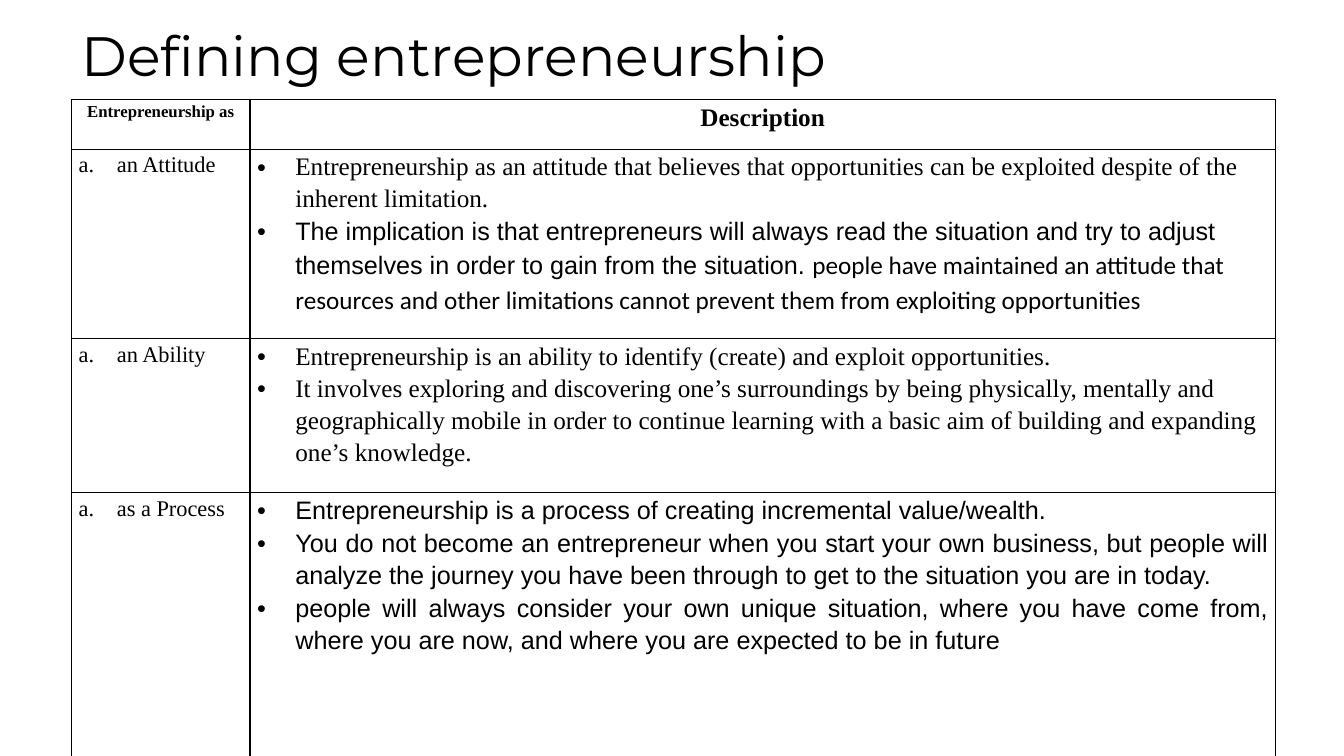
from lxml import etree
from pptx import Presentation
from pptx import util as u
from pptx.dml.color import RGBColor
from pptx.enum import text as t
from pptx.oxml.ns import qn

COLORS = {"ink": "000000", "paper": "FFFFFF"}
SERIF, SANS, HUMANIST, DISPLAY = "Times New Roman", "Arial", "Calibri", "Montserrat"
WIDTH, HEIGHT = 13.33, 7.5
COLUMNS = [1.77, 10.17]
ROWS = [0.49, 1.88, 1.53, 2.64]
LEFT, JUSTIFY, CENTER = t.PP_ALIGN.LEFT, t.PP_ALIGN.JUSTIFY, t.PP_ALIGN.CENTER
LETTER = ("a:buAutoNum", {"type": "alphaLcPeriod"})
DOT = ("a:buChar", {"char": "•"})

# Each topic: label, alignment, paragraphs made of (wording, font) spans
TOPICS = [
    ("an Attitude", LEFT, [
        [("Entrepreneurship as an attitude that believes that opportunities can be "
          "exploited despite of the inherent limitation.", SERIF)],
        [("The implication is that entrepreneurs will always read the situation and try "
          "to adjust themselves in order to gain from the situation. ", SANS),
         ("people have maintained an attitude that resources and other limitations "
          "cannot prevent them from exploiting opportunities", HUMANIST)],
    ]),
    ("an Ability", LEFT, [
        [("Entrepreneurship is an ability to identify (create) and exploit "
          "opportunities.", SERIF)],
        [("It involves exploring and discovering one’s surroundings by being physically, "
          "mentally and geographically mobile in order to continue learning with a basic "
          "aim of building and expanding one’s knowledge.", SERIF)],
    ]),
    ("as a Process", JUSTIFY, [
        [("Entrepreneurship is a process of creating incremental value/wealth.", SANS)],
        [("You do not become an entrepreneur when you start your own business, but people "
          "will analyze the journey you have been through to get to the situation you are "
          "in today. ", SANS)],
        [("people will always consider your own unique situation, where you have come "
          "from, where you are now, and where you are expected to be in future", SANS)],
    ]),
]


def assign(target, values):
    for name, value in values.items():
        setattr(target, name, value)


def add_span(para, wording, font, size, bold=False):
    span = para.add_run()
    span.text = wording
    assign(span.font, {"name": font, "size": u.Pt(size), "bold": bold})
    span.font.color.rgb = RGBColor.from_string(COLORS["ink"])


def add_bullet(para, bullet):
    tag, values = bullet
    props = para._p.get_or_add_pPr()
    props.set("marL", str(u.Inches(0.38)))
    props.set("indent", str(-u.Inches(0.38)))
    if bullet is DOT:
        etree.SubElement(props, qn("a:buFont"), typeface=SANS)
    etree.SubElement(props, qn(tag), values)


def style_cell(cell):
    assign(cell, {"margin_left": u.Inches(0.07), "margin_right": u.Inches(0.07),
                  "margin_top": 0, "margin_bottom": 0})
    props = cell._tc.get_or_add_tcPr()
    for side in ("a:lnL", "a:lnR", "a:lnT", "a:lnB"):
        border = etree.SubElement(props, qn(side), w=str(u.Pt(1)))
        fill = etree.SubElement(border, qn("a:solidFill"))
        etree.SubElement(fill, qn("a:srgbClr"), val=COLORS["ink"])
    cell.fill.background()


def fill_cell(cell, paragraphs, size, align=LEFT, bullet=None, bold=False):
    style_cell(cell)
    frame = cell.text_frame
    for index, spans in enumerate(paragraphs):
        para = frame.add_paragraph() if index else frame.paragraphs[0]
        if bullet:
            add_bullet(para, bullet)
        assign(para, {"alignment": align, "line_spacing": 1.15})
        for wording, font in spans:
            add_span(para, wording, font, size, bold)


def add_title(page, left, top, width, height):
    box = page.shapes.add_textbox(*map(u.Inches, (left, top, width, height)))
    assign(box.text_frame, {"word_wrap": True, "vertical_anchor": t.MSO_ANCHOR.MIDDLE})
    para = box.text_frame.paragraphs[0]
    para.line_spacing = 0.9
    add_span(para, "Defining entrepreneurship", DISPLAY, 39.6)


def add_definitions(page, left, top):
    box = (left, top, sum(COLUMNS), sum(ROWS))
    table = page.shapes.add_table(len(ROWS), len(COLUMNS), *map(u.Inches, box)).table
    assign(table, {"first_row": False, "horz_banding": False})
    for column, width in zip(table.columns, COLUMNS):
        column.width = u.Inches(width)
    for row, height in zip(table.rows, ROWS):
        row.height = u.Inches(height)

    # Header row
    for index, (heading, size) in enumerate([("Entrepreneurship as", 12), ("Description", 18)]):
        fill_cell(table.cell(0, index), [[(heading, SERIF)]], size, CENTER, bold=True)

    # One row per topic
    for index, (label, align, paragraphs) in enumerate(TOPICS, 1):
        fill_cell(table.cell(index, 0), [[(label, SERIF)]], 16, bullet=LETTER)
        fill_cell(table.cell(index, 1), paragraphs, 18, align, DOT)


def main():
    deck = Presentation()
    assign(deck, {"slide_width": u.Inches(WIDTH), "slide_height": u.Inches(HEIGHT)})
    page = deck.slides.add_slide(deck.slide_layouts[6])
    page.background.fill.solid()
    page.background.fill.fore_color.rgb = RGBColor.from_string(COLORS["paper"])
    add_title(page, 0.71, 0.17, 11.71, 0.82)
    add_definitions(page, 0.71, 0.99)
    deck.save("out.pptx")


if __name__ == "__main__":
    main()
